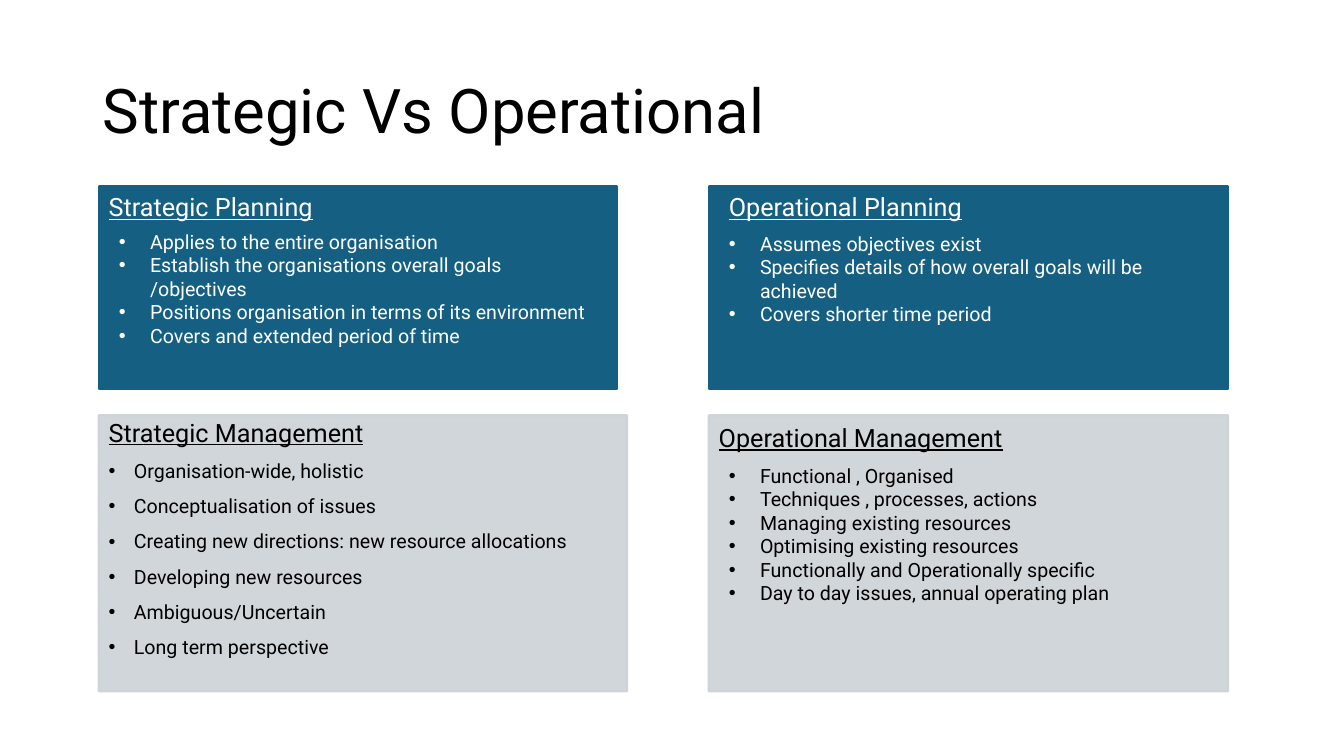
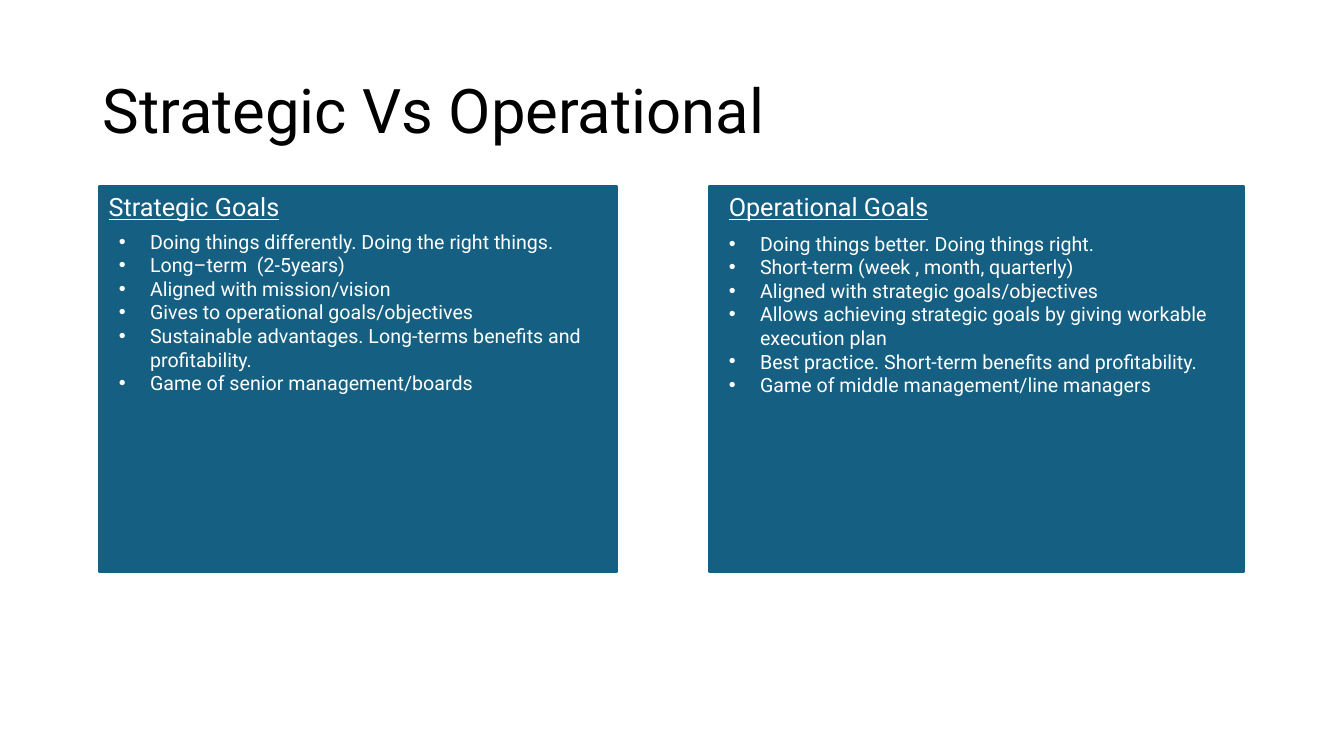
"""Builds two slides that compare strategic and operational work."""
from dataclasses import dataclass

import pptx
import pptx.dml.color
import pptx.enum.shapes
import pptx.enum.text
import pptx.oxml.ns
import pptx.util
from lxml import etree


@dataclass(frozen=True)
class Theme:
    font: str = "Roboto"
    black: str = "000000"
    white: str = "FFFFFF"
    blue: str = "156082"
    grey: str = "CCD2D8"
    grey_opacity: int = 90
    title_size: int = 44
    heading_size: int = 18
    item_size: int = 14
    outline: float = 1.5


THEME = Theme()
PX = 9144
SLIDE_SIZE = (1333, 750)
TITLE = "Strategic Vs Operational"
TITLE_AT = (92, 40, 1150, 145)
LEFT, RIGHT = 98, 703
TOP, BOTTOM = 185, 412
INSET = 10
LABEL_HEIGHT = 40
WIDE_INDENT, NARROW_INDENT = 31, 25

SLIDES = [
    [
        {"heading": "Strategic Planning", "at": (LEFT, TOP, 514, 201),
         "list_at": (LEFT + INSET, 223, 495, 151),
         "items": ["Applies to the entire organisation",
                   "Establish the organisations overall goals /objectives",
                   "Positions organisation in terms of its environment",
                   "Covers and extended period of time"]},
        {"heading": "Operational Planning", "at": (RIGHT, TOP, 515, 201),
         "label_at": (RIGHT + INSET, TOP, 322, LABEL_HEIGHT),
         "list_at": (RIGHT + INSET, 225, 446, 104),
         "items": ["Assumes objectives exist",
                   "Specifies details of how overall goals will be achieved",
                   "Covers shorter time period"]},
        {"heading": "Strategic Management", "at": (LEFT, BOTTOM, 524, 274), "grey": True,
         "items": ["Organisation-wide, holistic",
                   "Conceptualisation of issues",
                   "Creating new directions: new resource allocations",
                   "Developing new resources",
                   "Ambiguous/Uncertain",
                   "Long term perspective"]},
        {"heading": "Operational Management", "at": (RIGHT, BOTTOM, 515, 274), "grey": True,
         "label_at": (RIGHT, 414, 352, LABEL_HEIGHT),
         "list_at": (RIGHT + INSET, 455, 447, 199),
         "items": ["Functional , Organised",
                   "Techniques , processes, actions",
                   "Managing existing resources",
                   "Optimising existing resources",
                   "Functionally and Operationally specific",
                   "Day to day issues, annual operating plan"]},
    ],
    [
        {"heading": "Strategic Goals", "at": (LEFT, TOP, 514, 382),
         "list_at": (LEFT + INSET, 223, 495, 199),
         "items": ["Doing things differently. Doing the right things.",
                   "Long–term  (2-5years)",
                   "Aligned with mission/vision",
                   "Gives to operational goals/objectives",
                   "Sustainable advantages. Long-terms benefits and profitability.",
                   "Game of senior management/boards"]},
        {"heading": "Operational Goals", "at": (RIGHT, TOP, 531, 382),
         "label_at": (RIGHT + INSET, TOP, 276, LABEL_HEIGHT),
         "list_at": (RIGHT + INSET, 225, 505, 222),
         "items": ["Doing things better. Doing things right.",
                   "Short-term (week , month, quarterly)",
                   "Aligned with strategic goals/objectives",
                   "Allows achieving strategic goals by giving workable execution plan",
                   "Best practice. Short-term benefits and profitability.",
                   "Game of middle management/line managers"]},
    ],
]


def emu(lengths):
    return [length * PX for length in lengths]


def rgb(color):
    return pptx.dml.color.RGBColor.from_string(color)


def add_text_box(page, at):
    frame = page.shapes.add_textbox(*emu(at)).text_frame
    frame.word_wrap = True
    return frame


def add_para(frame, text, size, color, underline=False):
    para = frame.paragraphs[0]
    if para.runs:
        para = frame.add_paragraph()
    para.add_run().text = text
    para.alignment = pptx.enum.text.PP_ALIGN.LEFT
    para.font.name = THEME.font
    para.font.size = pptx.util.Pt(size)
    para.font.color.rgb = rgb(color)
    para.font.underline = underline
    return para


def add_bullet(para, indent):
    properties = para._p.get_or_add_pPr()
    properties.set("marL", str(indent * PX))
    properties.set("indent", str(-indent * PX))
    bullet_font = etree.Element(pptx.oxml.ns.qn("a:buFont"), typeface="Arial")
    bullet = etree.Element(pptx.oxml.ns.qn("a:buChar"), char="•")
    defaults = properties.find(pptx.oxml.ns.qn("a:defRPr"))
    defaults.addprevious(bullet_font)
    defaults.addprevious(bullet)


def add_rectangle(page, at, color, opacity):
    box = page.shapes.add_shape(pptx.enum.shapes.MSO_SHAPE.RECTANGLE, *emu(at))
    box.shadow.inherit = False
    box.fill.solid()
    box.fill.fore_color.rgb = rgb(color)
    box.line.color.rgb = rgb(color)
    box.line.width = pptx.util.Pt(THEME.outline)
    if opacity < 100:
        for node in box._element.spPr.iter(pptx.oxml.ns.qn("a:srgbClr")):
            etree.SubElement(node, pptx.oxml.ns.qn("a:alpha"), val=str(opacity * 1000))
    box.text_frame.word_wrap = True
    box.text_frame.vertical_anchor = pptx.enum.text.MSO_ANCHOR.TOP
    return box.text_frame


def add_panel(page, panel):
    grey = panel.get("grey", False)
    fill, ink = (THEME.grey, THEME.black) if grey else (THEME.blue, THEME.white)
    frame = add_rectangle(page, panel["at"], fill, THEME.grey_opacity if grey else 100)
    label = add_text_box(page, panel["label_at"]) if "label_at" in panel else frame
    heading = add_para(label, panel["heading"], THEME.heading_size, ink, underline=True)
    spaced = "list_at" not in panel
    if spaced:
        heading.line_spacing = 0.9
    listing = frame if spaced else add_text_box(page, panel["list_at"])
    for item in panel["items"]:
        para = add_para(listing, item, THEME.item_size, ink)
        if spaced:
            para.line_spacing = 0.9
            para.space_before = pptx.util.Pt(10)
        add_bullet(para, NARROW_INDENT if spaced else WIDE_INDENT)


def add_title(page):
    frame = add_text_box(page, TITLE_AT)
    frame.vertical_anchor = pptx.enum.text.MSO_ANCHOR.MIDDLE
    add_para(frame, TITLE, THEME.title_size, THEME.black).line_spacing = 0.9


def main():
    deck = pptx.Presentation()
    deck.slide_width, deck.slide_height = emu(SLIDE_SIZE)
    for panels in SLIDES:
        page = deck.slides.add_slide(deck.slide_layouts[6])
        add_title(page)
        for panel in panels:
            add_panel(page, panel)
    deck.save("out.pptx")


if __name__ == "__main__":
    main()
